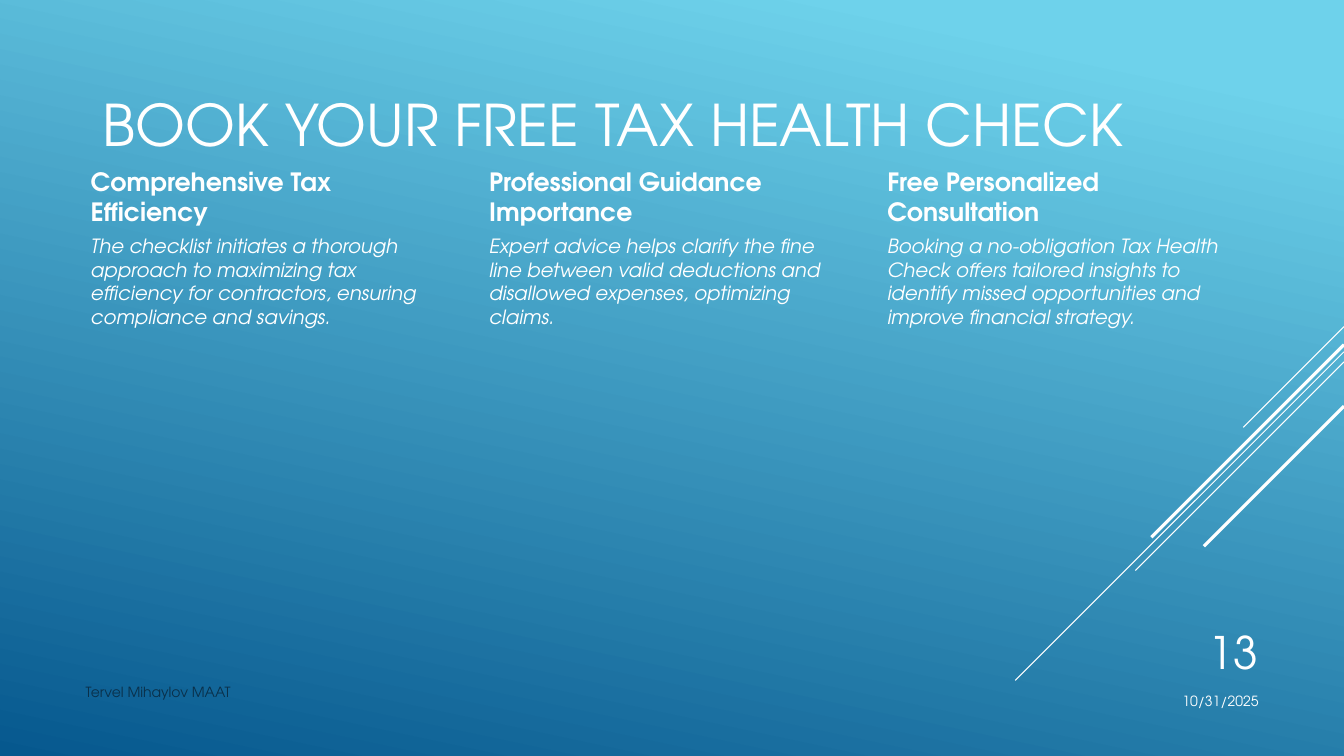
from pptx import Presentation
from pptx.util import Inches as In, Pt
from pptx.dml.color import RGBColor as RGB
from pptx.enum.shapes import MSO_CONNECTOR as Conn
from pptx.enum.text import MSO_ANCHOR as Anchor, MSO_AUTO_SIZE as Fit, PP_ALIGN as Align
from pptx.oxml.ns import qn
from lxml.etree import SubElement
from dataclasses import dataclass

# Content
TITLE = "BOOK YOUR FREE TAX HEALTH CHECK"
TOPICS = [
    ("Comprehensive Tax Efficiency",
     "The checklist initiates a thorough approach to maximizing tax efficiency "
     "for contractors, ensuring compliance and savings."),
    ("Professional Guidance Importance",
     "Expert advice helps clarify the fine line between valid deductions and "
     "disallowed expenses, optimizing claims."),
    ("Free Personalized Consultation",
     "Booking a no-obligation Tax Health Check offers tailored insights to "
     "identify missed opportunities and improve financial strategy."),
]
AUTHOR, DATE, NUMBER = "Tervel Mihaylov MAAT", "10/31/2025", "13"

# Diagonal rays: height at the right edge, run, weight
RAYS = [(3.24, 1, 0.75), (3.49, 3.26, 0.75), (3.59, 2.07, 0.75),
        (3.42, 1.91, 2.25), (4.03, 1.39, 2.25)]


@dataclass
class Theme:
    font: str = "TeX Gyre Adventor"
    white: str = "FFFFFF"
    navy: str = "0A304A"
    sky: str = "6ED2EB"
    deep: str = "06588E"
    title: int = 41
    number: int = 32
    head: int = 18
    body: int = 14
    small: int = 10


T = Theme()

# Grid
WIDE, HIGH = 13.33, 7.5
LEFT, TOP = 0.75, 1.62
COL, STEP = 3.59, 3.95
HEAD, BODY = 0.68, 4.42
RIGHT = WIDE - LEFT
PAD = (0.1, 0.05, 0.1, 0.05)


def write(shape, text, size, color=T.white, bold=False, italic=False,
          align=Align.LEFT, anchor=Anchor.TOP, pad=PAD):
    frame = shape.text_frame
    frame.text = text
    frame.word_wrap = True
    frame.auto_size = Fit.NONE
    frame.vertical_anchor = anchor
    (frame.margin_left, frame.margin_top,
     frame.margin_right, frame.margin_bottom) = map(In, pad)
    para = frame.paragraphs[0]
    para.alignment = align
    font = para.runs[0].font
    font.name, font.size = T.font, Pt(size)
    font.bold, font.italic = bold, italic
    font.color.rgb = RGB.from_string(color)


def label(x, y, w, h, text, size, **style):
    write(slide.shapes.add_textbox(In(x), In(y), In(w), In(h)), text, size, **style)


deck = Presentation()
deck.slide_width, deck.slide_height = In(WIDE), In(HIGH)
slide = deck.slides.add_slide(deck.slide_layouts[5])

# Background
fill = slide.background.fill
fill.gradient()
fill.gradient_angle = 360 - 102
for stop, spot, color in zip(fill.gradient_stops, (0.1, 1), (T.sky, T.deep)):
    stop.position = spot
    stop.color.rgb = RGB.from_string(color)

# Rays
for y, run, weight in RAYS:
    ray = slide.shapes.add_connector(
        Conn.STRAIGHT, In(WIDE), In(y), In(WIDE - run), In(y + run))
    ray.line.color.rgb = RGB.from_string(T.white)
    ray.line.width = Pt(weight)
    SubElement(ray._element.spPr, qn("a:effectLst"))

# Title
title = slide.shapes.title
title.left, title.top, title.width, title.height = map(In, (0.92, 0.4, 11.5, 1.22))
write(title, TITLE, T.title, anchor=Anchor.BOTTOM)

# Topic columns
for i, (head, body) in enumerate(TOPICS):
    x = LEFT + i * STEP
    label(x, TOP, COL, HEAD, head, T.head, bold=True, pad=(0.15, 0.03, 0.03, 0.03))
    label(x, TOP + HEAD, COL, BODY, body, T.body, italic=True,
          pad=(0.15, 0.02, 0.02, 0.02))

# Footer
label(LEFT, 6.66, 8.25, 0.4, AUTHOR, T.small, color=T.navy, anchor=Anchor.MIDDLE)
for w, y, h, text, size in [(1.75, 6.75, 0.4, DATE, T.small),
                            (1.25, 6.1, 0.73, NUMBER, T.number)]:
    label(RIGHT - w, y, w, h, text, size, align=Align.RIGHT, anchor=Anchor.MIDDLE)

deck.save("out.pptx")
